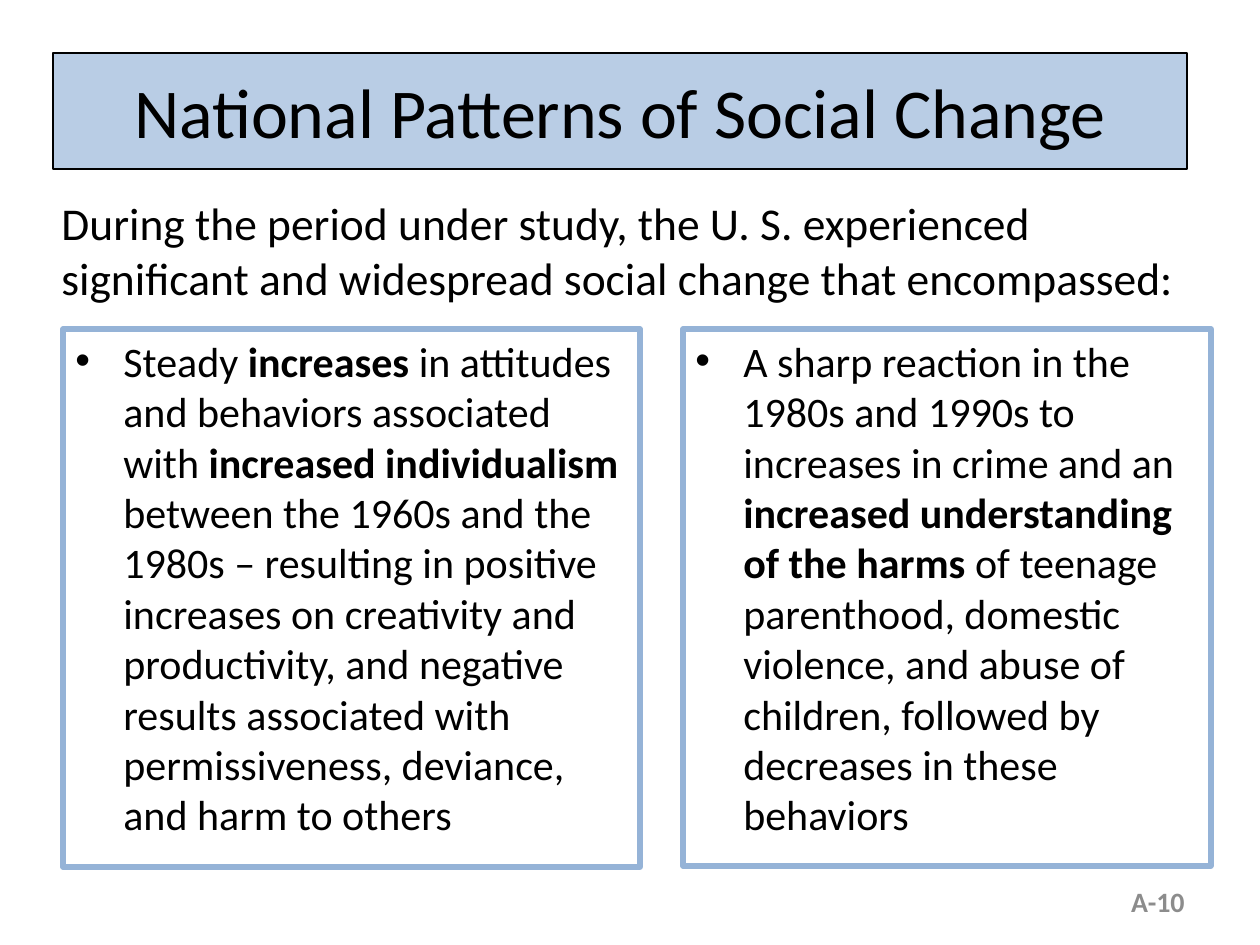
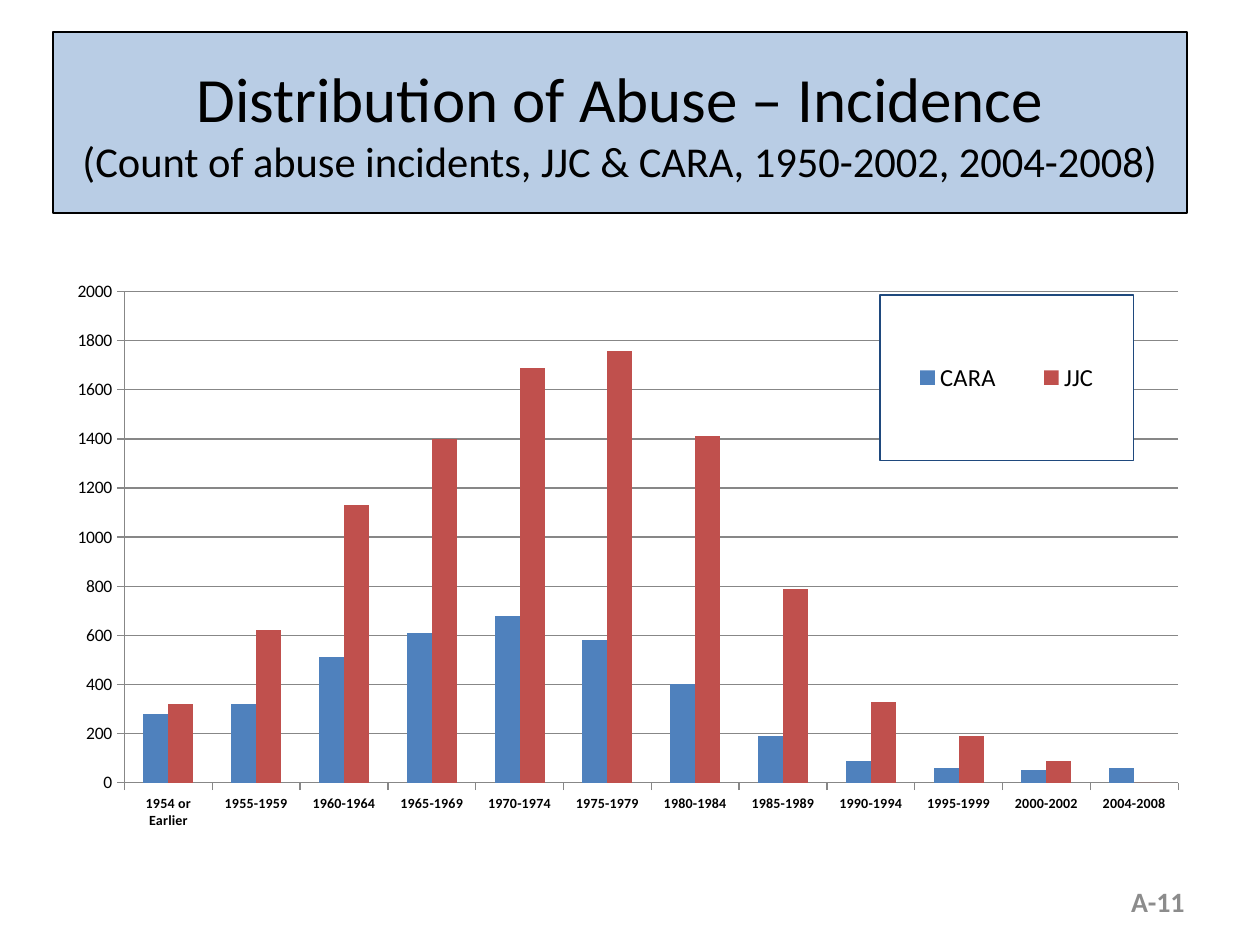
from lxml import etree
from pptx import Presentation
from pptx.chart.data import CategoryChartData
from pptx.dml.color import RGBColor
from pptx.enum.chart import XL_CHART_TYPE, XL_LEGEND_POSITION, XL_TICK_MARK
from pptx.enum.shapes import MSO_SHAPE
from pptx.enum.text import MSO_ANCHOR, PP_ALIGN
from pptx.oxml import parse_xml
from pptx.oxml.ns import nsdecls, qn
from pptx.util import Pt

RECT = MSO_SHAPE.RECTANGLE
COLUMN = XL_CHART_TYPE.COLUMN_CLUSTERED
SIDE = XL_LEGEND_POSITION.RIGHT
OUT = XL_TICK_MARK.OUTSIDE
TOP, MIDDLE = MSO_ANCHOR.TOP, MSO_ANCHOR.MIDDLE
LEFT, CENTER, RIGHT = PP_ALIGN.LEFT, PP_ALIGN.CENTER, PP_ALIGN.RIGHT

BLACK = RGBColor(0x00, 0x00, 0x00)
GRAY = RGBColor(0x8C, 0x8C, 0x8C)
GRID = RGBColor(0x87, 0x87, 0x87)
PALE = RGBColor(0xB9, 0xCD, 0xE5)
FRAME = RGBColor(0x95, 0xB3, 0xD7)
BLUE = RGBColor(0x4F, 0x81, 0xBD)
RED = RGBColor(0xC0, 0x50, 0x4D)

FONT = "Calibri"
SCALE = 914400 / 126
HANG = 48

YEARS = ["1954 or Earlier", "1955-1959", "1960-1964", "1965-1969",
         "1970-1974", "1975-1979", "1980-1984", "1985-1989",
         "1990-1994", "1995-1999", "2000-2002", "2004-2008"]
COUNTS = [
    ("CARA", BLUE, [280, 320, 510, 610, 680, 580, 400, 190, 90, 60, 50, 60]),
    ("JJC", RED, [320, 620, 1130, 1400, 1690, 1760, 1410, 790, 330, 190, 90, 0]),
]


def px(*values):
    """Turn px lengths into EMU."""
    return [round(value * SCALE) for value in values]


def style(font, size, color=BLACK, bold=False):
    """Set the look of a font."""
    font.name, font.size, font.bold = FONT, Pt(size), bold
    font.color.rgb = color


def write(para, text, size, color=BLACK, bold=False):
    """Add one run to a paragraph."""
    run = para.add_run()
    run.text = text
    style(run.font, size, color, bold)


def setup(shape, align, anchor):
    """Prepare a text frame and return its first paragraph."""
    frame = shape.text_frame
    frame.word_wrap = True
    frame.vertical_anchor = anchor
    para = frame.paragraphs[0]
    para.alignment = align
    return para


def add_text(slide, box, align, anchor):
    """Add a text box and return its paragraph."""
    return setup(slide.shapes.add_textbox(*px(*box)), align, anchor)


def add_rect(slide, box, line, width, align, anchor, fill=None):
    """Add an outlined rectangle and return its paragraph."""
    rect = slide.shapes.add_shape(RECT, *px(*box))
    rect.shadow.inherit = False
    if fill is None:
        rect.fill.background()
    else:
        rect.fill.solid()
        rect.fill.fore_color.rgb = fill
    rect.line.color.rgb = line
    rect.line.width = Pt(width)
    return setup(rect, align, anchor)


def add_title(slide, top, height, lines):
    """Add the title band with its sized lines."""
    para = add_rect(slide, (53, top, 1134, height), BLACK, 1.5,
                    CENTER, MIDDLE, PALE)
    for index, (text, size) in enumerate(lines):
        if index:
            para.add_line_break()
        write(para, text, size)


def add_page(slide, label):
    """Add the page label."""
    para = add_text(slide, (903, 876, 294, 50), RIGHT, MIDDLE)
    write(para, label, 16, GRAY, True)


def add_panel(slide, box, parts):
    """Add a framed bullet whose odd parts are bold."""
    para = add_rect(slide, box, FRAME, 3, LEFT, TOP)
    para.space_before = Pt(4.8)
    props = para._p.get_or_add_pPr()
    hang = px(HANG)[0]
    props.set("marL", str(hang))
    props.set("indent", str(-hang))
    etree.SubElement(props, qn("a:buFont")).set("typeface", "Arial")
    etree.SubElement(props, qn("a:buChar")).set("char", "•")
    for index, text in enumerate(parts):
        write(para, text, 24, bold=index % 2 == 1)


def make_layout(x, y, w, h, inner=False):
    """Build a manual chart layout from fractions."""
    target = '<c:layoutTarget val="inner"/>' if inner else ""
    sizes = "".join(f'<c:{key} val="{value}"/>'
                    for key, value in zip("xywh", (x, y, w, h)))
    return parse_xml(
        f'<c:layout {nsdecls("c")}><c:manualLayout>{target}'
        f'<c:xMode val="edge"/><c:yMode val="edge"/>{sizes}'
        '</c:manualLayout></c:layout>')


def clear(node):
    """Drop any layout that a chart part has."""
    for old in node.findall(qn("c:layout")):
        node.remove(old)


def add_legend(chart):
    """Add a framed legend over the plot."""
    chart.has_legend = True
    legend = chart.legend
    legend.position = SIDE
    legend.include_in_layout = False
    style(legend.font, 14)
    node = legend._element
    clear(node)
    node.find(qn("c:legendPos")).addnext(make_layout(0.73, 0.08, 0.21, 0.25))
    node.find(qn("c:overlay")).addnext(parse_xml(
        f'<c:spPr {nsdecls("c", "a")}>'
        '<a:solidFill><a:srgbClr val="FFFFFF"/></a:solidFill>'
        '<a:ln w="9525"><a:solidFill><a:srgbClr val="1F497D"/></a:solidFill>'
        '</a:ln></c:spPr>'))


def add_bars(slide, box):
    """Add the clustered columns of incident counts."""
    data = CategoryChartData()
    data.categories = YEARS
    for name, _, counts in COUNTS:
        data.add_series(name, counts)
    chart = slide.shapes.add_chart(COLUMN, *px(*box), data).chart
    chart.has_title = False
    style(chart.font, 10)
    plot = chart.plots[0]
    plot.gap_width, plot.overlap = 150, 0
    plot.vary_by_categories = False
    for series, (_, color, _) in zip(plot.series, COUNTS):
        series.format.fill.solid()
        series.format.fill.fore_color.rgb = color
    dates, scale = chart.category_axis, chart.value_axis
    for axis, size, bold in ((dates, 8, True), (scale, 10, False)):
        axis.major_tick_mark = OUT
        axis.format.line.color.rgb = GRID
        style(axis.tick_labels.font, size, bold=bold)
    scale.minimum_scale, scale.maximum_scale = 0, 2000
    scale.major_unit = 200
    scale.has_major_gridlines = True
    scale.major_gridlines.format.line.color.rgb = GRID
    area = plot._element.getparent()
    clear(area)
    area.insert(0, make_layout(0.104, 0.075, 0.873, 0.742, True))
    add_legend(chart)


def build_change(slide):
    """Fill the slide on social change."""
    add_title(slide, 53, 116, [("National Patterns of Social Change", 40)])
    para = add_text(slide, (49, 189, 1168, 116), LEFT, TOP)
    para.space_before = Pt(5.2)
    write(para, "During the period under study, the U. S. experienced "
          "significant and widespread social change that encompassed:", 26)
    add_page(slide, "A-10")
    add_panel(slide, (63, 329, 577, 538), [
        "Steady ", "increases ", "in attitudes and behaviors associated with ",
        "increased individualism ",
        "between the 1960s and the 1980s – resulting in positive increases on "
        "creativity and productivity, and negative results associated with "
        "permissiveness, deviance, and harm to others"])
    add_panel(slide, (683, 329, 528, 537), [
        "A sharp reaction in the 1980s and 1990s to increases in crime and an ",
        "increased understanding of the harms ",
        "of teenage parenthood, domestic violence, and abuse of children, "
        "followed by decreases in these behaviors"])


def build_abuse(slide):
    """Fill the slide on abuse counts."""
    add_title(slide, 32, 181, [
        ("Distribution of Abuse – Incidence", 36),
        ("(Count of abuse incidents, JJC & CARA, 1950-2002, 2004-2008)", 24.3)])
    add_bars(slide, (-1, 242, 1207, 662))
    add_page(slide, "A-11")


def main():
    """Build and save the deck."""
    deck = Presentation()
    deck.slide_width, deck.slide_height = px(1260, 945)
    for build in (build_change, build_abuse):
        build(deck.slides.add_slide(deck.slide_layouts[6]))
    deck.save("out.pptx")


if __name__ == "__main__":
    main()
